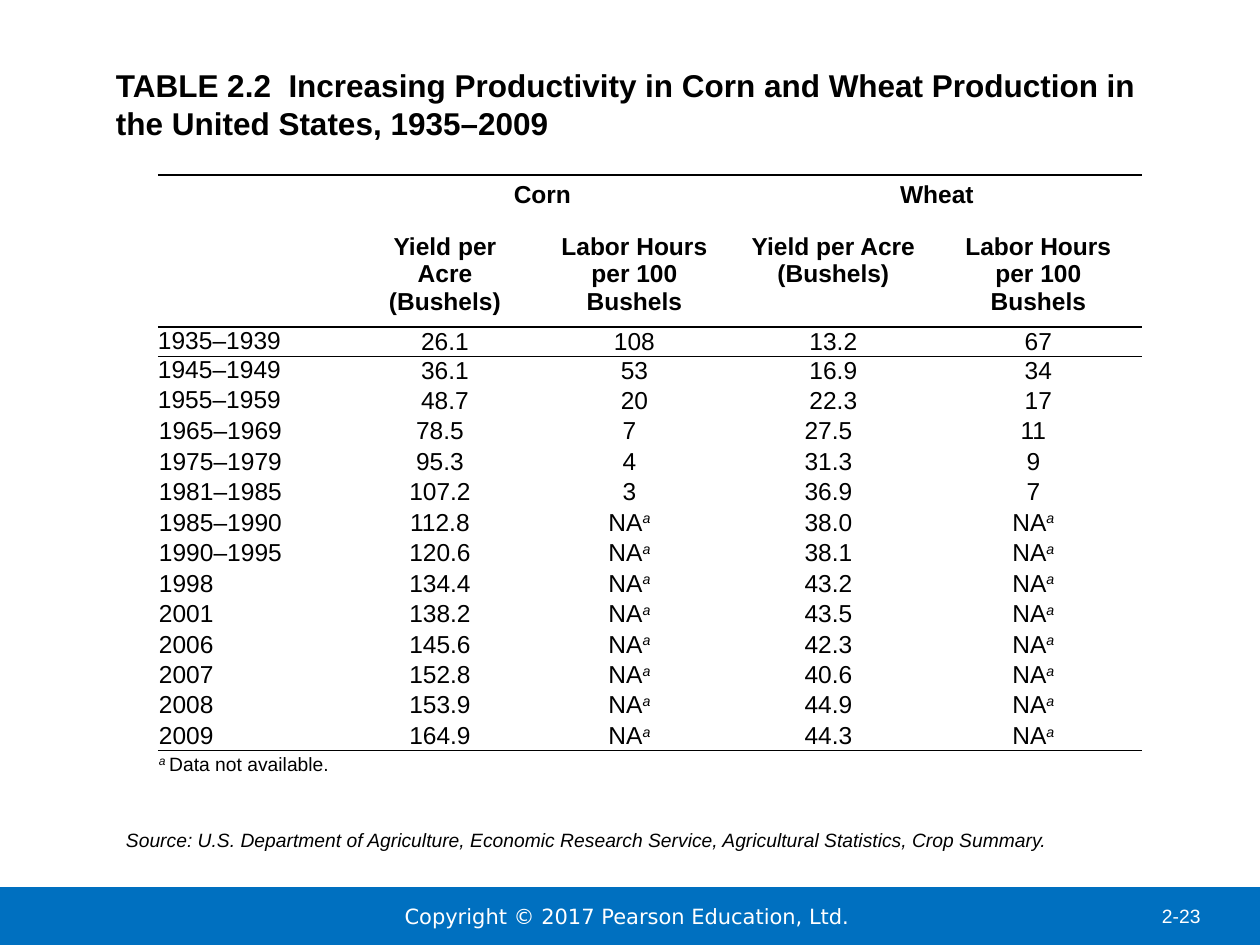
from dataclasses import dataclass

from lxml.etree import SubElement
from pptx import Presentation
from pptx.dml.color import RGBColor
from pptx.enum.shapes import MSO_SHAPE
from pptx.enum.text import MSO_ANCHOR, PP_ALIGN
from pptx.oxml.ns import qn
from pptx.slide import Slide
from pptx.table import Table, _Cell
from pptx.text.text import TextFrame
from pptx.util import Pt

EMU_PER_PX = 914400 / 126
BLACK = RGBColor(0x00, 0x00, 0x00)
WHITE = RGBColor(0xFF, 0xFF, 0xFF)
BLUE = RGBColor(0x00, 0x70, 0xC0)
PLAIN_TABLE_STYLE = "{2D5ABB26-0587-4C30-8999-92F81FD0307C}"
MARK = "a"  # footnote mark, raised and italic

COLUMN_WIDTHS = (195, 184, 195, 203, 207)
HEADER_HEIGHTS = (52, 94)
ROW_HEIGHT = 27
TIGHT_ROWS = 3
HEADINGS = (
    "",
    "Yield per Acre (Bushels)",
    "Labor Hours per 100 Bushels",
    "Yield per Acre (Bushels)",
    "Labor Hours\vper 100 Bushels",
)


@dataclass(frozen=True)
class Box:
    left: int
    top: int
    width: int
    height: int


@dataclass(frozen=True)
class TextStyle:
    size: int
    color: RGBColor = BLACK
    bold: bool = False
    italic: bool = False
    font: str = "Arial"
    align: PP_ALIGN = PP_ALIGN.LEFT
    anchor: MSO_ANCHOR = MSO_ANCHOR.TOP


@dataclass(frozen=True)
class Harvest:
    years: str
    corn_yield: str
    corn_hours: str
    wheat_yield: str
    wheat_hours: str

    def texts(self) -> tuple[str, ...]:
        return (self.years, self.corn_yield, self.corn_hours,
                self.wheat_yield, self.wheat_hours)


HARVESTS = (
    Harvest("1935–1939", "26.1", "108", "13.2", "67"),
    Harvest("1945–1949", "36.1", "53", "16.9", "34"),
    Harvest("1955–1959", "48.7", "20", "22.3", "17"),
    Harvest("1965–1969", "78.5", "7", "27.5", "11"),
    Harvest("1975–1979", "95.3", "4", "31.3", "9"),
    Harvest("1981–1985", "107.2", "3", "36.9", "7"),
    Harvest("1985–1990", "112.8", "NA", "38.0", "NA"),
    Harvest("1990–1995", "120.6", "NA", "38.1", "NA"),
    Harvest("1998", "134.4", "NA", "43.2", "NA"),
    Harvest("2001", "138.2", "NA", "43.5", "NA"),
    Harvest("2006", "145.6", "NA", "42.3", "NA"),
    Harvest("2007", "152.8", "NA", "40.6", "NA"),
    Harvest("2008", "153.9", "NA", "44.9", "NA"),
    Harvest("2009", "164.9", "NA", "44.3", "NA"),
)

TITLE = TextStyle(18, bold=True)
SOURCE = TextStyle(11, italic=True, anchor=MSO_ANCHOR.BOTTOM)
PAGE_NUMBER = TextStyle(11, WHITE)
COPYRIGHT = TextStyle(12, WHITE, font="DejaVu Sans", align=PP_ALIGN.CENTER,
                      anchor=MSO_ANCHOR.MIDDLE)
HEADING = TextStyle(14, bold=True, align=PP_ALIGN.CENTER)
TIGHT_YEARS = TextStyle(14)
YEARS = TextStyle(14, anchor=MSO_ANCHOR.MIDDLE)
VALUE = TextStyle(14, align=PP_ALIGN.CENTER, anchor=MSO_ANCHOR.MIDDLE)
NOTE = TextStyle(11, anchor=MSO_ANCHOR.MIDDLE)


def px(length: int) -> int:
    return round(length * EMU_PER_PX)


def place(box: Box) -> tuple[int, ...]:
    return tuple(px(n) for n in (box.left, box.top, box.width, box.height))


def write_text(frame: TextFrame, text: str, style: TextStyle) -> None:
    frame.text = text
    paragraph = frame.paragraphs[0]
    paragraph.alignment = style.align
    for run in paragraph.runs:
        run.font.size = Pt(style.size)
        run.font.name = style.font
        run.font.bold = style.bold
        run.font.italic = style.italic
        run.font.color.rgb = style.color


def raise_mark(frame: TextFrame, run_index: int, size: int) -> None:
    font = frame.paragraphs[0].runs[run_index].font
    font.size = Pt(size)
    font.italic = True
    font._element.set("baseline", "30000")


def add_run(frame: TextFrame, text: str, style: TextStyle) -> None:
    run = frame.paragraphs[0].add_run()
    run.text = text
    run.font.size = Pt(style.size)
    run.font.name = style.font
    run.font.color.rgb = style.color


def add_text(slide: Slide, box: Box, text: str, style: TextStyle, margin: tuple[int, int] = (0, 0)) -> None:
    frame = slide.shapes.add_textbox(*place(box)).text_frame
    frame.word_wrap = True
    frame.vertical_anchor = style.anchor
    frame.margin_left = frame.margin_right = px(margin[0])
    frame.margin_top = frame.margin_bottom = px(margin[1])
    write_text(frame, text, style)


def add_band(slide: Slide, box: Box) -> None:
    band = slide.shapes.add_shape(MSO_SHAPE.RECTANGLE, *place(box))
    band.shadow.inherit = False
    band.fill.solid()
    band.fill.fore_color.rgb = BLUE
    band.line.fill.background()


def fill_cell(cell: _Cell, text: str, style: TextStyle, margins: tuple[int, int, int, int]) -> None:
    """Write a cell; margins are left, top, right, bottom."""
    (cell.margin_left, cell.margin_top,
     cell.margin_right, cell.margin_bottom) = (px(margin) for margin in margins)
    cell.vertical_anchor = style.anchor
    write_text(cell.text_frame, text, style)
    if text == "NA":
        add_run(cell.text_frame, MARK, style)
        raise_mark(cell.text_frame, 1, style.size)


def rule_row(table: Table, row: int, side: str) -> None:
    """Draw a black line on one side (lnT or lnB) of a row."""
    for column in range(len(COLUMN_WIDTHS)):
        properties = table.cell(row, column)._tc.get_or_add_tcPr()
        line = SubElement(properties, qn(f"a:{side}"), w=str(Pt(1)))
        color = SubElement(SubElement(line, qn("a:solidFill")), qn("a:srgbClr"))
        color.set("val", str(BLACK))


def add_harvest_table(slide: Slide) -> None:
    heights = (*HEADER_HEIGHTS, *[ROW_HEIGHT] * len(HARVESTS), ROW_HEIGHT)
    box = Box(158, 175, sum(COLUMN_WIDTHS), sum(heights))
    shape = slide.shapes.add_table(len(heights), len(COLUMN_WIDTHS), *place(box))
    table = shape.table
    table.first_row = table.horz_banding = False
    next(shape._element.iter(qn("a:tableStyleId"))).text = PLAIN_TABLE_STYLE
    for column, width in zip(table.columns, COLUMN_WIDTHS):
        column.width = px(width)
    for row, height in zip(table.rows, heights):
        row.height = px(height)

    for column, crop in ((1, "Corn"), (3, "Wheat")):
        table.cell(0, column).merge(table.cell(0, column + 1))
        fill_cell(table.cell(0, column), crop, HEADING, (12, 6, 12, 6))
    for column, heading in enumerate(HEADINGS):
        fill_cell(table.cell(1, column), heading, HEADING, (12, 6, 12, 6))
    for index, harvest in enumerate(HARVESTS):
        tight = index < TIGHT_ROWS
        for column, text in enumerate(harvest.texts()):
            style = VALUE if column else TIGHT_YEARS if tight else YEARS
            margins = (0, 0, 0, 0) if tight else (1, 1, 11 if column else 1, 0)
            fill_cell(table.cell(index + 2, column), text, style, margins)

    last = len(heights) - 1
    note = table.cell(last, 0)
    note.merge(table.cell(last, len(COLUMN_WIDTHS) - 1))
    fill_cell(note, f"{MARK} ", NOTE, (1, 1, 1, 0))
    add_run(note.text_frame, "Data not available.", NOTE)
    raise_mark(note.text_frame, 0, 12)

    for row, side in ((0, "lnT"), (1, "lnB"), (2, "lnT"), (last - 1, "lnB"), (last, "lnT")):
        rule_row(table, row, side)
    for cell in table.iter_cells():
        cell.fill.background()


def main() -> None:
    presentation = Presentation()
    presentation.slide_width, presentation.slide_height = px(1260), px(945)
    slide = presentation.slides.add_slide(presentation.slide_layouts[6])
    add_band(slide, Box(-1, 887, 1262, 59))
    add_text(slide, Box(1149, 898, 96, 37), "2-23", PAGE_NUMBER, (13, 6))
    add_text(slide, Box(195, 888, 871, 57), "Copyright © 2017 Pearson Education, Ltd. ", COPYRIGHT)
    add_text(slide, Box(116, 66, 1040, 147), "TABLE 2.2  Increasing Productivity in Corn and "
             "Wheat Production in the United States, 1935–2009", TITLE)
    add_harvest_table(slide)
    add_text(slide, Box(126, 827, 1134, 24), "Source: U.S. Department of Agriculture, Economic "
             "Research Service, Agricultural Statistics, Crop Summary.", SOURCE)
    presentation.save("out.pptx")


if __name__ == "__main__":
    main()
